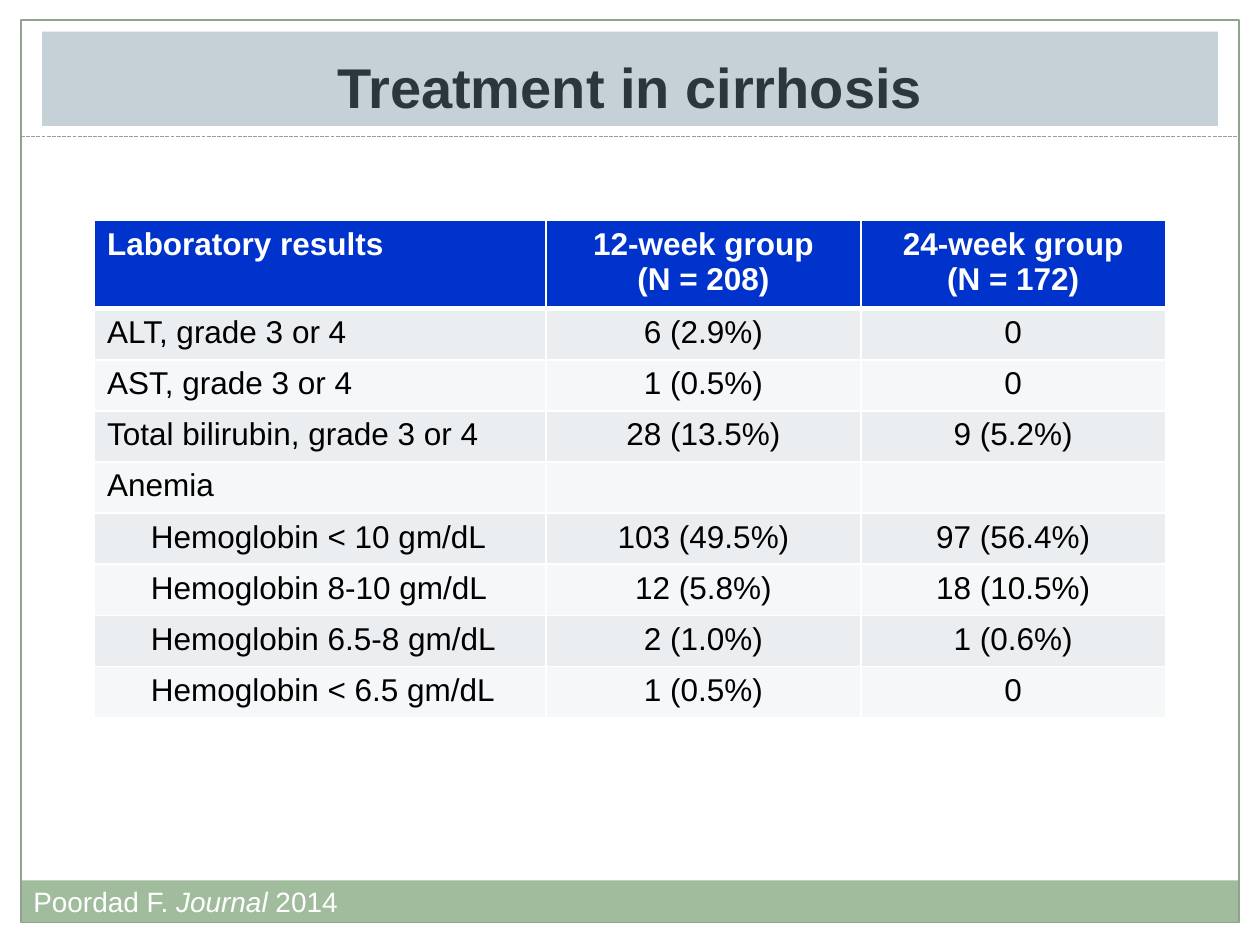
from lxml import etree
from pptx import Presentation
from pptx.dml.color import RGBColor
from pptx.enum.dml import MSO_LINE
from pptx.enum.shapes import MSO_CONNECTOR, MSO_SHAPE
from pptx.enum.text import MSO_ANCHOR, PP_ALIGN
from pptx.oxml.ns import qn
from pptx.util import Pt

RECTANGLE = MSO_SHAPE.RECTANGLE
STRAIGHT = MSO_CONNECTOR.STRAIGHT
DASHED = MSO_LINE.SQUARE_DOT
LEFT, CENTER = PP_ALIGN.LEFT, PP_ALIGN.CENTER
BOTTOM = MSO_ANCHOR.BOTTOM

WHITE = RGBColor(0xFF, 0xFF, 0xFF)
BLACK = RGBColor(0x00, 0x00, 0x00)
BAND_GREEN = RGBColor(0xA0, 0xBC, 0x9D)
LINE_GREEN = RGBColor(0x8D, 0xA6, 0x8B)
TITLE_FILL = RGBColor(0xC5, 0xD1, 0xD7)
TITLE_TEXT = RGBColor(0x2A, 0x37, 0x3D)
HEADER_BLUE = RGBColor(0x00, 0x33, 0xCC)
ROW_FILLS = (RGBColor(0xEA, 0xEE, 0xF0), RGBColor(0xF5, 0xF7, 0xF8))

FONT = "Arial"
CELL_MARGIN = 7.2
INDENT = 25
COLUMN_WIDTHS = (258, 180, 174)
HEADER_HEIGHT, ROW_HEIGHT = 49.8, 29.2

HEADER = ("Laboratory results", "12-week group\n(N = 208)", "24-week group\n(N = 172)")
# Each result: indent level, label, 12-week value, 24-week value
RESULTS = (
    (0, "ALT, grade 3 or 4", "6 (2.9%)", "0"),
    (0, "AST, grade 3 or 4", "1 (0.5%)", "0"),
    (0, "Total bilirubin, grade 3 or 4", "28 (13.5%)", "9 (5.2%)"),
    (0, "Anemia", "", ""),
    (1, "Hemoglobin < 10 gm/dL", "103 (49.5%)", "97 (56.4%)"),
    (1, "Hemoglobin 8-10 gm/dL", "12 (5.8%)", "18 (10.5%)"),
    (1, "Hemoglobin 6.5-8 gm/dL", "2 (1.0%)", "1 (0.6%)"),
    (1, "Hemoglobin < 6.5 gm/dL", "1 (0.5%)", "0"),
)


def points(box):
    return [Pt(length) for length in box]


def add_run(para, text, size, color, bold=False, italic=False):
    span = para.add_run()
    span.text = text
    font = span.font
    font.name, font.size = FONT, Pt(size)
    font.bold, font.italic = bold, italic
    font.color.rgb = color


def add_frame(page, box, rule_top, band_height):
    """Outline the page, with a footer band and a dashed rule below the title."""
    left, top, width, height = box
    band_box = (left, top + height - band_height, width, band_height)
    band = page.shapes.add_shape(RECTANGLE, *points(band_box))
    band.shadow.inherit = False
    band.fill.solid()
    band.fill.fore_color.rgb = BAND_GREEN
    band.line.fill.background()

    outline = page.shapes.add_shape(RECTANGLE, *points(box))
    outline.shadow.inherit = False
    outline.fill.background()

    rule_ends = (left, rule_top, left + width, rule_top)
    rule = page.shapes.add_connector(STRAIGHT, *points(rule_ends))
    etree.SubElement(rule._element.spPr, qn("a:effectLst"))
    rule.line.dash_style = DASHED
    for shape in (outline, rule):
        shape.line.color.rgb = LINE_GREEN
        shape.line.width = Pt(0.75)


def add_citation(page, box):
    frame = page.shapes.add_textbox(*points(box)).text_frame
    frame.word_wrap = True
    para = frame.paragraphs[0]
    for text, italic in (("Poordad F. ", False), ("Journal", True), (" 2014", False)):
        add_run(para, text, 16, WHITE, italic=italic)


def place_title(page, box, text):
    title = page.shapes.title
    title.left, title.top, title.width, title.height = points(box)
    title.fill.solid()
    title.fill.fore_color.rgb = TITLE_FILL
    title.text_frame.vertical_anchor = BOTTOM
    para = title.text_frame.paragraphs[0]
    para.alignment = CENTER
    add_run(para, text, 32, TITLE_TEXT, bold=True)


def set_borders(cell, bottom_width):
    properties = cell._tc.get_or_add_tcPr()
    for side, width in (("L", 1), ("R", 1), ("T", 1), ("B", bottom_width)):
        line = etree.SubElement(properties, qn(f"a:ln{side}"), w=str(Pt(width)))
        fill = etree.SubElement(line, qn("a:solidFill"))
        etree.SubElement(fill, qn("a:srgbClr"), val=str(WHITE))


def fill_cell(cell, text, alignment, fill, color, is_header):
    set_borders(cell, 3 if is_header else 1)
    cell.fill.solid()
    cell.fill.fore_color.rgb = fill
    frame = cell.text_frame
    for index, line in enumerate(text.split("\n")):
        para = frame.add_paragraph() if index else frame.paragraphs[0]
        para.alignment = alignment
        para.font.size = Pt(18)
        if line:
            add_run(para, line, 18, color, bold=is_header)


def add_results_table(page, left, top):
    heights = [HEADER_HEIGHT] + [ROW_HEIGHT] * len(RESULTS)
    box = (left, top, sum(COLUMN_WIDTHS), sum(heights))
    table = page.shapes.add_table(len(heights), len(COLUMN_WIDTHS), *points(box)).table
    for column, width in zip(table.columns, COLUMN_WIDTHS):
        column.width = Pt(width)
    for row_index, (level, *texts) in enumerate([(0, *HEADER), *RESULTS]):
        row = table.rows[row_index]
        row.height = Pt(heights[row_index])
        is_header = row_index == 0
        fill = HEADER_BLUE if is_header else ROW_FILLS[(row_index - 1) % 2]
        color = WHITE if is_header else BLACK
        for column_index, text in enumerate(texts):
            alignment = CENTER if column_index else LEFT
            fill_cell(row.cells[column_index], text, alignment, fill, color, is_header)
        row.cells[0].margin_left = Pt(CELL_MARGIN + level * INDENT)


def main():
    deck = Presentation()
    deck.slide_width, deck.slide_height = Pt(720), Pt(540)
    title_only = deck.slide_layouts[5]
    page = deck.slides.add_slide(title_only)
    add_frame(page, (12, 11.5, 696, 515.5), rule_top=78, band_height=24)
    add_citation(page, (12, 502, 684, 26.6))
    add_results_table(page, 54, 126)
    place_title(page, (24, 18, 672, 54), "Treatment in cirrhosis")
    deck.save("out.pptx")


if __name__ == "__main__":
    main()
